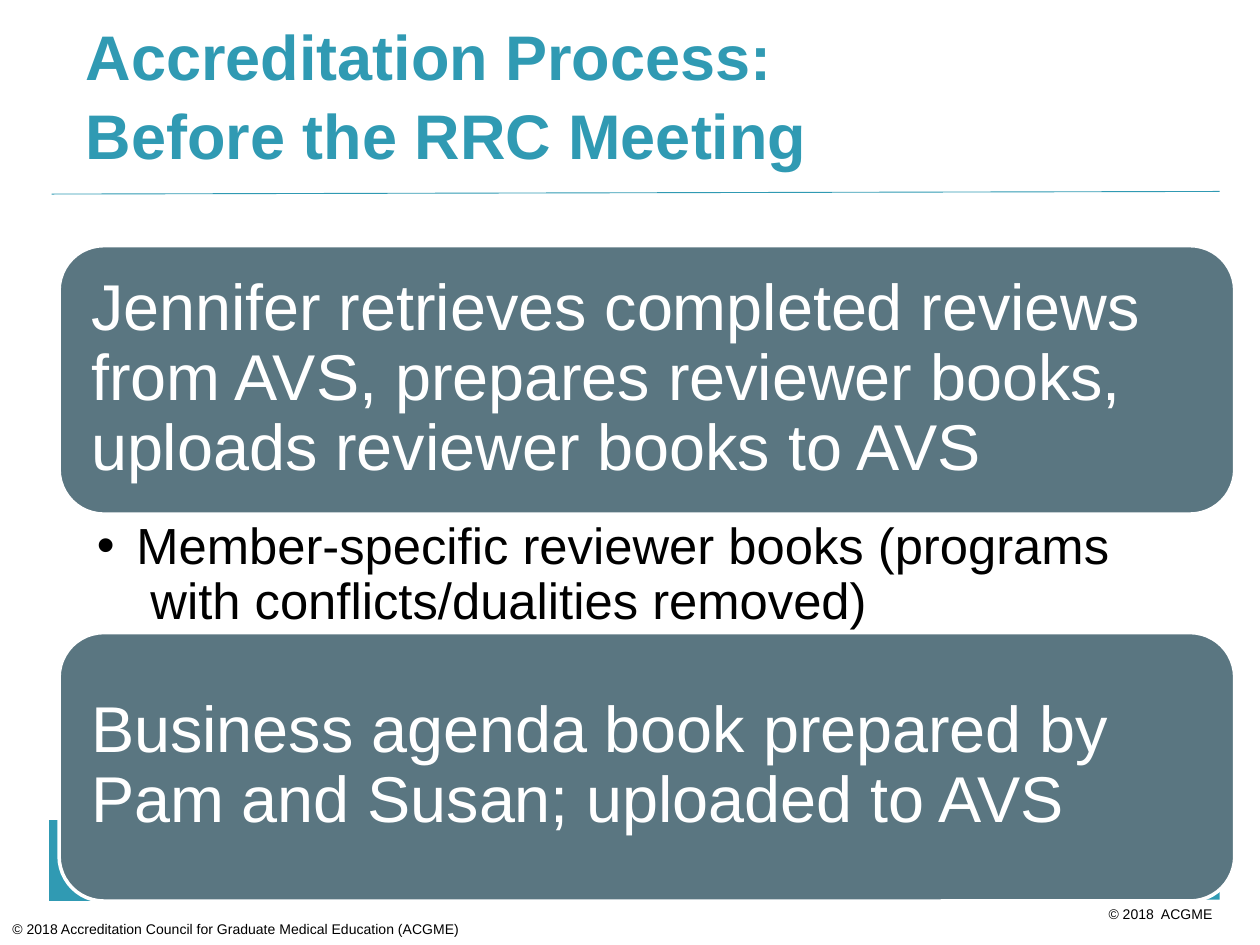
from lxml.etree import SubElement
from pptx import Presentation
from pptx.dml.color import RGBColor
from pptx.enum.shapes import MSO_CONNECTOR as Connector, MSO_SHAPE as Shape
from pptx.enum.text import MSO_ANCHOR as Anchor, MSO_AUTO_SIZE as AutoSize, PP_ALIGN as Align
from pptx.oxml.ns import qn
from pptx.util import Pt

COLORS = {"teal": "309AB3", "slate": "5A7681", "white": "FFFFFF", "black": "000000"}


class SlideBuilder:
    font_name = "Arial"

    def __init__(self, slide):
        self.slide = slide

    def color(self, name):
        return RGBColor.from_string(COLORS[name])

    def place(self, element, box):
        element.left, element.top, element.width, element.height = map(Pt, box)

    def format_frame(self, frame, size, color, insets=(7.2, 3.6, 7.2, 3.6),
                     anchor=Anchor.TOP, align=Align.LEFT, spacing=1.0, bold=False):
        frame.word_wrap = True
        frame.auto_size = AutoSize.NONE
        frame.vertical_anchor = anchor
        (frame.margin_left, frame.margin_top,
         frame.margin_right, frame.margin_bottom) = map(Pt, insets)
        for paragraph in frame.paragraphs:
            paragraph.alignment = align
            paragraph.line_spacing = spacing
            paragraph.space_before = Pt(0)
            for run in paragraph.runs:
                run.font.name = self.font_name
                run.font.size = Pt(size)
                run.font.bold = bold
                run.font.color.rgb = self.color(color)

    def block(self, kind, box, fill, outline=None):
        block = self.slide.shapes.add_shape(kind, *map(Pt, box))
        block.shadow.inherit = False
        block.fill.solid()
        block.fill.fore_color.rgb = self.color(fill)
        if outline:
            block.line.color.rgb = self.color(outline)
            block.line.width = Pt(2)
        else:
            block.line.fill.background()
        return block

    def rule(self, start, end, color):
        rule = self.slide.shapes.add_connector(Connector.STRAIGHT, *map(Pt, start + end))
        rule.line.color.rgb = self.color(color)
        rule.line.width = Pt(0.5)
        SubElement(rule._element.spPr, qn("a:effectLst"))

    def title(self, text, box):
        title = self.slide.shapes.title
        self.place(title, box)
        title.text_frame.text = text
        self.format_frame(title.text_frame, 36, "teal", anchor=Anchor.BOTTOM,
                          spacing=1.05, bold=True)

    def step(self, text, box):
        step = self.block(Shape.ROUNDED_RECTANGLE, box, "slate", "white")
        step.text_frame.text = text
        self.format_frame(step.text_frame, 37, "white", (10.8,) * 4,
                          Anchor.MIDDLE, spacing=0.9)

    def bullet(self, text, box):
        body = self.slide.placeholders[1]
        self.place(body, box)
        body.text_frame.text = text
        paragraph = body.text_frame.paragraphs[0]
        paragraph.level = 1
        properties = paragraph._p.get_or_add_pPr()
        properties.set("marL", str(Pt(22.5)))
        properties.set("indent", str(Pt(-22.5)))
        SubElement(properties, qn("a:buChar"), char="•")
        self.format_frame(body.text_frame, 29, "black", (21.6, 3.6, 20.9, 3.6), spacing=0.9)

    def caption(self, text, box, align=Align.LEFT, right_inset=7.2):
        caption = self.slide.shapes.add_textbox(*map(Pt, box))
        caption.text_frame.text = text
        self.format_frame(caption.text_frame, 8, "black",
                          (7.2, 3.6, right_inset, 3.6), align=align)


def main():
    deck = Presentation()
    deck.slide_width, deck.slide_height = Pt(720), Pt(540)
    builder = SlideBuilder(deck.slides.add_slide(deck.slide_layouts[1]))

    # Footer band and header rule
    builder.block(Shape.RECTANGLE, (69.84, 468.7, 627.1, 45.4), "teal")
    builder.rule((29.5, 110.9), (697, 109.4), "teal")
    builder.caption("© 2018  ACGME", (625, 514, 80, 17.3), Align.RIGHT, 12)
    builder.block(Shape.RECTANGLE, (28.1, 468.7, 36, 46.1), "teal")

    # Title
    builder.title("Accreditation Process:\vBefore the RRC Meeting", (41.8, 12.2, 635.8, 90))

    # Process steps, with the detail between them
    left, top, width, step_height, detail_height = 33.8, 140.4, 671.8, 153.4, 67.7
    detail_top = top + step_height
    builder.step("Jennifer retrieves completed reviews from AVS, prepares reviewer books, "
                 "uploads reviewer books to AVS", (left, top, width, step_height))
    builder.bullet("Member-specific reviewer books (programs\v with conflicts/dualities removed)",
                   (left, detail_top, width, detail_height))
    builder.step("Business agenda book prepared by Pam and Susan; uploaded to AVS",
                 (left, detail_top + detail_height, width, step_height))

    # Copyright line
    builder.caption("© 2018 Accreditation Council for Graduate Medical Education (ACGME)",
                    (0, 522.7, 345.6, 17.3))

    deck.save("out.pptx")


if __name__ == "__main__":
    main()
